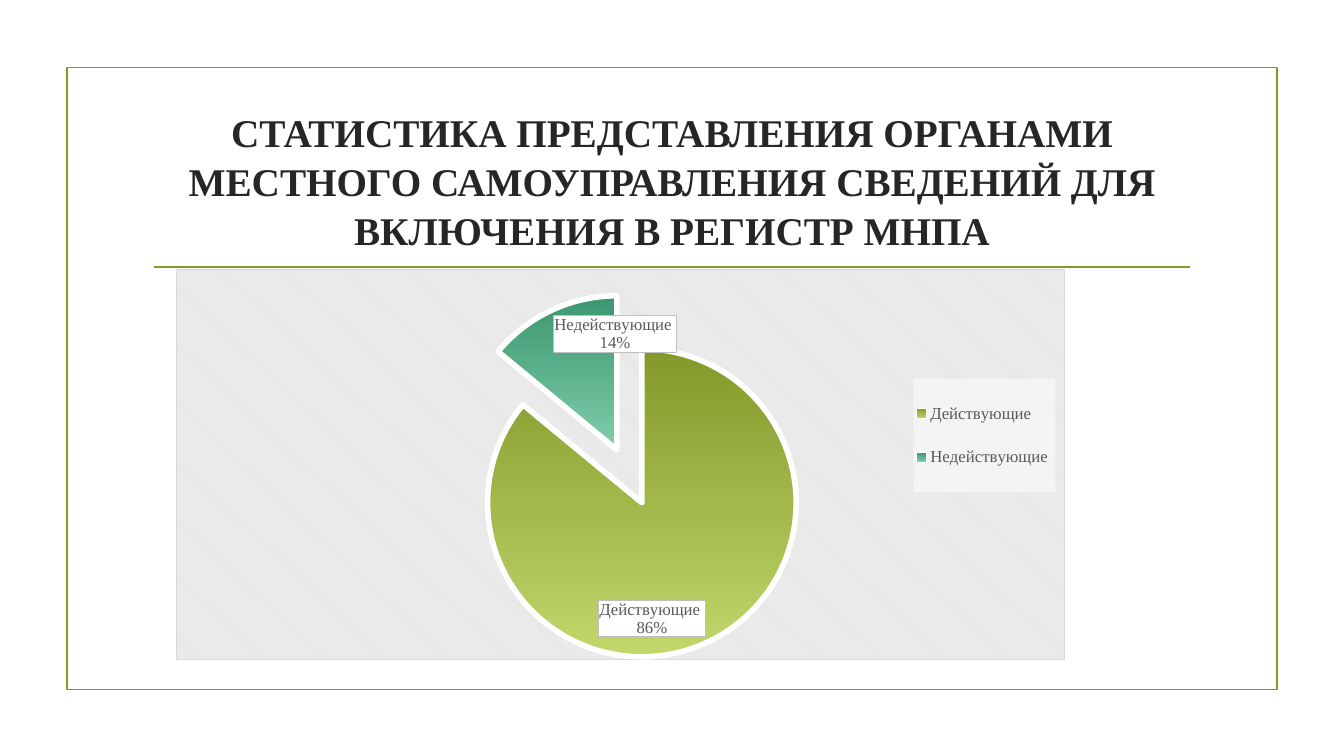
from dataclasses import dataclass

from lxml.etree import SubElement
from pptx import Presentation
from pptx.chart.data import CategoryChartData
from pptx.dml.color import RGBColor
from pptx.enum.chart import XL_CHART_TYPE, XL_LABEL_POSITION, XL_LEGEND_POSITION
from pptx.enum.shapes import MSO_CONNECTOR, MSO_SHAPE
from pptx.enum.text import MSO_ANCHOR, MSO_AUTO_SIZE, PP_ALIGN
from pptx.oxml import parse_xml
from pptx.oxml.ns import nsdecls, qn
from pptx.util import Inches, Pt


@dataclass(frozen=True)
class Theme:
    width: float = 13.33
    height: float = 7.5
    font: str = "Times New Roman"
    title_size: int = 28
    chart_size: int = 12
    title: str = "262626"
    text: str = "595959"
    accent: str = "83992A"
    white: str = "FFFFFF"
    panel: str = "E6E6E6"
    panel_border: str = "D9D9D9"
    label_border: str = "BFBFBF"
    rule_width: float = 1.25
    slice_border: float = 4
    slices: tuple = (("83992A", "C1D66B"), ("3C9770", "7FCCAB"))


THEME = Theme()
TITLE = ("СТАТИСТИКА ПРЕДСТАВЛЕНИЯ ОРГАНАМИ МЕСТНОГО САМОУПРАВЛЕНИЯ "
         "СВЕДЕНИЙ ДЛЯ ВКЛЮЧЕНИЯ В РЕГИСТР МНПА")
SHARES = {"Действующие ": 86, "Недействующие ": 14}
EXPLOSION = 19


def color(value):
    return RGBColor.from_string(value)


def apply(target, values):
    for name, value in values.items():
        setattr(target, name, value)


def style_font(font, size, value, bold=False):
    apply(font, {"name": THEME.font, "size": Pt(size), "bold": bold})
    font.color.rgb = color(value)


def style_line(line, value, width):
    line.color.rgb = color(value)
    line.width = Pt(width)


def add_title(slide, text, left, top, width, height):
    title = slide.shapes.title
    apply(title, {"left": Inches(left), "top": Inches(top),
                  "width": Inches(width), "height": Inches(height)})
    frame = title.text_frame
    frame.text = text
    apply(frame, {"word_wrap": True, "auto_size": MSO_AUTO_SIZE.NONE,
                  "vertical_anchor": MSO_ANCHOR.MIDDLE})
    paragraph = frame.paragraphs[0]
    apply(paragraph, {"alignment": PP_ALIGN.CENTER, "line_spacing": 1.04})
    style_font(paragraph.runs[0].font, THEME.title_size, THEME.title, bold=True)


def add_frame(slide, left, top, width, height):
    frame = slide.shapes.add_shape(
        MSO_SHAPE.RECTANGLE, *map(Inches, (left, top, width, height)))
    frame.shadow.inherit = False
    frame.fill.background()
    style_line(frame.line, THEME.accent, THEME.rule_width)


def add_rule(slide, left, right, top):
    rule = slide.shapes.add_connector(
        MSO_CONNECTOR.STRAIGHT, *map(Inches, (left, top, right, top)))
    style_line(rule.line, THEME.accent, THEME.rule_width)
    SubElement(rule._element.spPr, qn("a:effectLst"))


# Chart parts that need XML
def solid_fill(value, alpha=100):
    return (f'<a:solidFill><a:srgbClr val="{value}"><a:alpha val="{alpha * 1000}"/>'
            '</a:srgbClr></a:solidFill>')


def pattern_fill(preset, front, back):
    return (f'<a:pattFill prst="{preset}"><a:fgClr><a:srgbClr val="{front}"/></a:fgClr>'
            f'<a:bgClr><a:srgbClr val="{back}"/></a:bgClr></a:pattFill>')


def set_box(element, fill, border=None):
    outline = solid_fill(border) if border else "<a:noFill/>"
    box = parse_xml(f'<c:spPr {nsdecls("c", "a")}>{fill}'
                    f'<a:ln w="{Pt(0.75)}">{outline}</a:ln></c:spPr>')
    element.find(qn("c:txPr")).addprevious(box)


def set_layout(element, index, shares, inner=False):
    for old in element.findall(qn("c:layout")):
        element.remove(old)
    layout = SubElement(element, qn("c:layout"))
    element.insert(index, layout)
    manual = SubElement(layout, qn("c:manualLayout"))
    values = {"layoutTarget": "inner"} if inner else {}
    values.update(xMode="edge", yMode="edge", **dict(zip("xywh", shares)))
    for name, value in values.items():
        SubElement(manual, qn(f"c:{name}")).set("val", str(value))


def style_slices(series):
    for index, stops in enumerate(THEME.slices):
        point_format = series.points[index].format
        point_format.fill.gradient()
        point_format.fill.gradient_angle = 270
        for stop, value, position in zip(point_format.fill.gradient_stops, stops, (0, 1)):
            stop.color.rgb = color(value)
            stop.position = position
        style_line(point_format.line, THEME.white, THEME.slice_border)
    explosion = parse_xml(f'<c:explosion {nsdecls("c")} val="{EXPLOSION}"/>')
    series._element.find(qn("c:dPt")).addprevious(explosion)


def style_labels(plot):
    plot.has_data_labels = True
    labels = plot.data_labels
    apply(labels, {"show_category_name": True, "show_percentage": True,
                   "show_value": False, "number_format": "0%",
                   "number_format_is_linked": False,
                   "position": XL_LABEL_POSITION.INSIDE_END})
    style_font(labels.font, THEME.chart_size, THEME.text)
    set_box(labels._element, solid_fill(THEME.white), THEME.label_border)
    separator = parse_xml(f'<c:separator {nsdecls("c")}>\n</c:separator>')
    labels._element.find(qn("c:showPercent")).addnext(separator)
    bubble = labels._element.find(qn("c:showBubbleSize"))
    if bubble is not None:
        bubble.addnext(separator)


def style_legend(chart):
    chart.has_legend = True
    legend = chart.legend
    apply(legend, {"position": XL_LEGEND_POSITION.RIGHT, "include_in_layout": True})
    style_font(legend.font, THEME.chart_size, THEME.text)
    set_layout(legend._element, 1, (0.83, 0.28, 0.16, 0.29))
    set_box(legend._element, solid_fill(THEME.white, 50))


def add_pie(slide, shares, left, top, width, height):
    data = CategoryChartData()
    data.categories = list(shares)
    data.add_series("Series 1", list(shares.values()))
    chart = slide.shapes.add_chart(
        XL_CHART_TYPE.PIE, *map(Inches, (left, top, width, height)), data).chart
    chart.has_title = False
    style_font(chart.font, THEME.chart_size, THEME.text)
    set_box(chart._chartSpace, pattern_fill("dkDnDiag", THEME.white, THEME.panel),
            THEME.panel_border)
    plot = chart.plots[0]
    plot.vary_by_categories = True
    style_slices(plot.series[0])
    style_labels(plot)
    style_legend(chart)
    set_layout(chart._chartSpace.chart.plotArea, 0, (0.02, 0.06, 0.98, 0.94), inner=True)


def main():
    presentation = Presentation()
    apply(presentation, {"slide_width": Inches(THEME.width),
                         "slide_height": Inches(THEME.height)})
    slide = presentation.slides.add_slide(presentation.slide_layouts[5])

    # Border, heading and divider, centred on the slide
    center = THEME.width / 2
    add_frame(slide, center - 6, 0.67, 12, 6.17)
    add_title(slide, TITLE, center - 5.25, 1.07, 10.5, 1.43)
    add_rule(slide, center - 5.14, center + 5.14, 2.65)

    # Shares of acts in force and no longer in force
    add_pie(slide, SHARES, 1.75, 2.67, 8.81, 3.88)
    presentation.save("out.pptx")


if __name__ == "__main__":
    main()
